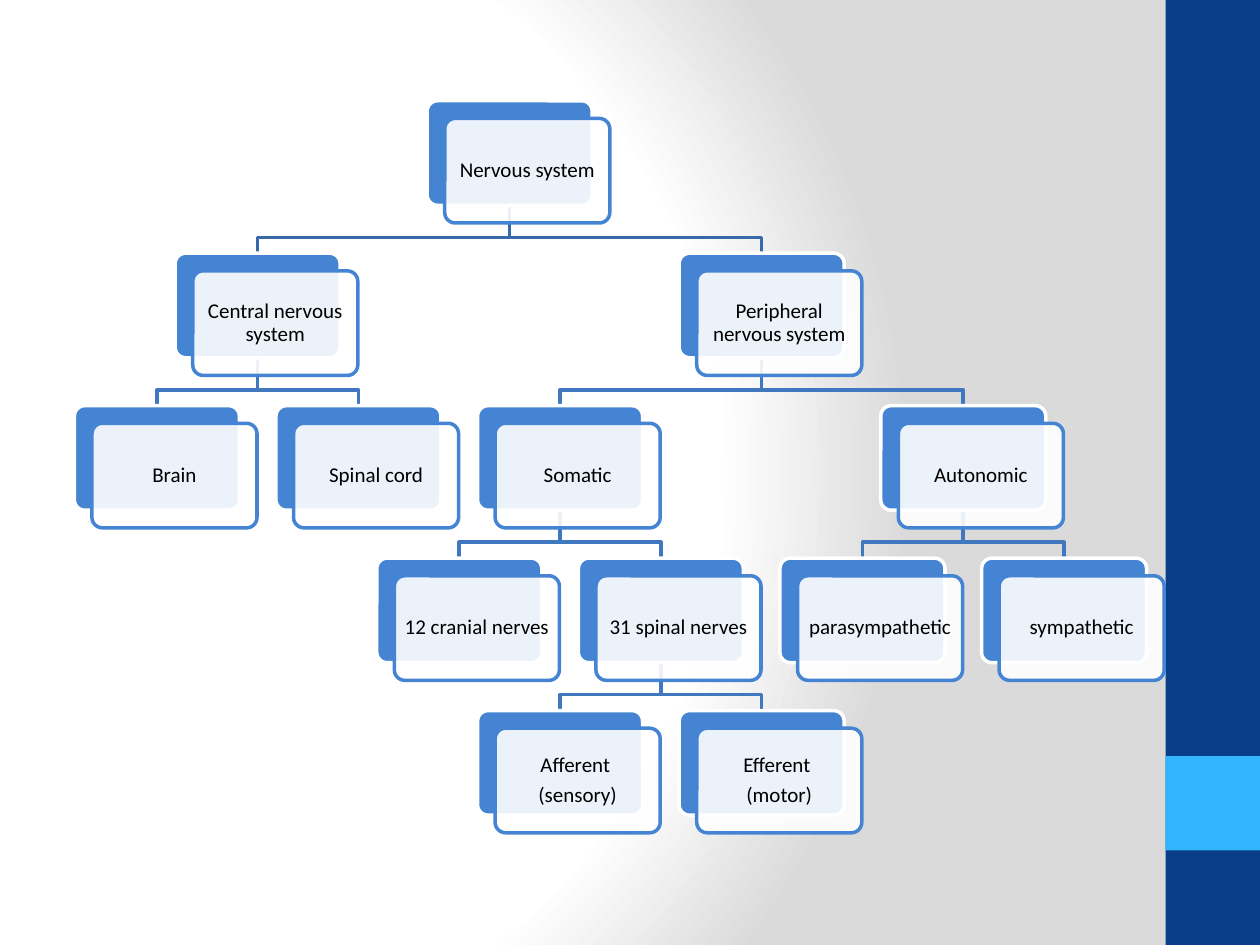
from lxml import etree
from pptx import Presentation
from pptx.dml.color import RGBColor
from pptx.enum.shapes import MSO_SHAPE
from pptx.enum.text import MSO_ANCHOR, PP_ALIGN
from pptx.oxml import parse_xml
from pptx.oxml.ns import nsdecls, qn
from pptx.util import Inches, Pt

RECT, ROUND = MSO_SHAPE.RECTANGLE, MSO_SHAPE.ROUNDED_RECTANGLE
MIDDLE, CENTER = MSO_ANCHOR.MIDDLE, PP_ALIGN.CENTER

HUES = {
    "white": "FFFFFF", "gray": "DADADA", "navy": "073E87", "sky": "31B6FD",
    "card": "4584D3", "trunk": "376AA9", "branch": "3F78BF", "text": "000000",
}
FONT = "Calibri"
WIDE, HIGH = 10, 7.5

# Chart grid, in inches
CHART = (0.59, 0.8)
COL, ROW = 0.8, 1.21
CARD_W, CARD_H = 1.31, 0.83
SHIFT = 0.14

# Each node: column, paragraphs, children
TREE = (3.5, ["Nervous system"], [
    (1, ["Central nervous system"], [
        (0, ["Brain"], []),
        (2, ["Spinal cord"], []),
    ]),
    (6, ["Peripheral nervous system"], [
        (4, ["Somatic"], [
            (3, ["12 cranial nerves"], []),
            (5, ["31 spinal nerves"], [
                (4, ["Afferent ", "(sensory)"], []),
                (6, ["Efferent ", "(motor)"], []),
            ]),
        ]),
        (8, ["Autonomic"], [
            (7, ["parasympathetic"], []),
            (9, ["sympathetic"], []),
        ]),
    ]),
])


def hue(name):
    return RGBColor.from_string(HUES[name])


def add_box(slide, kind, box, fill, line=None):
    shape = slide.shapes.add_shape(kind, *map(Inches, box))
    shape.shadow.inherit = False
    shape.fill.solid()
    shape.fill.fore_color.rgb = hue(fill)
    if line:
        shape.line.color.rgb = hue(line)
        shape.line.width = Pt(2)
    else:
        shape.line.fill.background()
    if kind == ROUND:
        shape.adjustments[0] = 0.1
    return shape


def paint_back(slide):
    """Radial gradient, white in the middle and gray outside."""
    slide.background.fill.gradient()
    old = slide.element.find(".//" + qn("a:gradFill"))
    stops = "".join(
        f'<a:gs pos="{pos}000"><a:srgbClr val="{HUES[name]}"/></a:gs>'
        for pos, name in ((0, "white"), (75, "white"), (100, "gray")))
    new = parse_xml(
        f'<a:gradFill {nsdecls("a")} rotWithShape="1"><a:gsLst>{stops}</a:gsLst>'
        '<a:path path="circle"><a:fillToRect l="20000" t="50000" r="100000" '
        'b="50000"/></a:path></a:gradFill>')
    old.getparent().replace(old, new)


def draw_band(slide, left, top, width, height):
    """Side band with one bright square."""
    add_box(slide, RECT, (left, top, width, height), "navy")
    add_box(slide, RECT, (left, top + 0.8 * height, width, width), "sky")


def place(node, row, left, top):
    return left + node[0] * COL, top + row * ROW


def draw_links(slide, node, row, left, top):
    """Elbow lines from a node down to each child."""
    x, y = place(node, row, left, top)
    mid, foot = x + CARD_W / 2, y + CARD_H
    bend = foot + (ROW - CARD_H) * 2 / 3
    for kid in node[2]:
        draw_links(slide, kid, row + 1, left, top)
        kid_x, kid_y = place(kid, row + 1, left, top)
        end = kid_x + CARD_W / 2
        pen = slide.shapes.build_freeform(Inches(mid), Inches(foot))
        pen.add_line_segments(
            [(Inches(a), Inches(b)) for a, b in
             ((mid, bend), (end, bend), (end, kid_y))], close=False)
        link = pen.convert_to_shape()
        link.shadow.inherit = False
        link.fill.background()
        link.line.color.rgb = hue("branch" if row else "trunk")
        link.line.width = Pt(2)


def draw_card(slide, words, x, y):
    """Solid back card and a clear front card that holds the words."""
    add_box(slide, ROUND, (x, y, CARD_W, CARD_H), "card", "white")
    front = add_box(slide, ROUND, (x + SHIFT, y + SHIFT, CARD_W, CARD_H),
                    "white", "card")
    tint = front.fill._xPr.find(qn("a:solidFill"))[0]
    etree.SubElement(tint, qn("a:alpha"), val="90000")
    frame = front.text_frame
    frame.word_wrap = True
    frame.vertical_anchor = MIDDLE
    frame.margin_left = frame.margin_right = Inches(0.04)
    frame.margin_top = frame.margin_bottom = Inches(0.05)
    for i, line in enumerate(words):
        para = frame.add_paragraph() if i else frame.paragraphs[0]
        para.alignment = CENTER
        para.line_spacing = 0.9
        para.space_after = Pt(4.2)
        run = para.add_run()
        run.text = line
        run.font.name, run.font.size = FONT, Pt(12)
        run.font.color.rgb = hue("text")


def draw_cards(slide, node, row, left, top):
    draw_card(slide, node[1], *place(node, row, left, top))
    for kid in node[2]:
        draw_cards(slide, kid, row + 1, left, top)


def main():
    deck = Presentation()
    deck.slide_width, deck.slide_height = Inches(WIDE), Inches(HIGH)
    slide = deck.slides.add_slide(deck.slide_layouts[6])
    paint_back(slide)
    draw_band(slide, 0.925 * WIDE, 0, 0.075 * WIDE, HIGH)
    # Lines lie behind the cards
    draw_links(slide, TREE, 0, *CHART)
    draw_cards(slide, TREE, 0, *CHART)
    deck.save("out.pptx")


if __name__ == "__main__":
    main()
